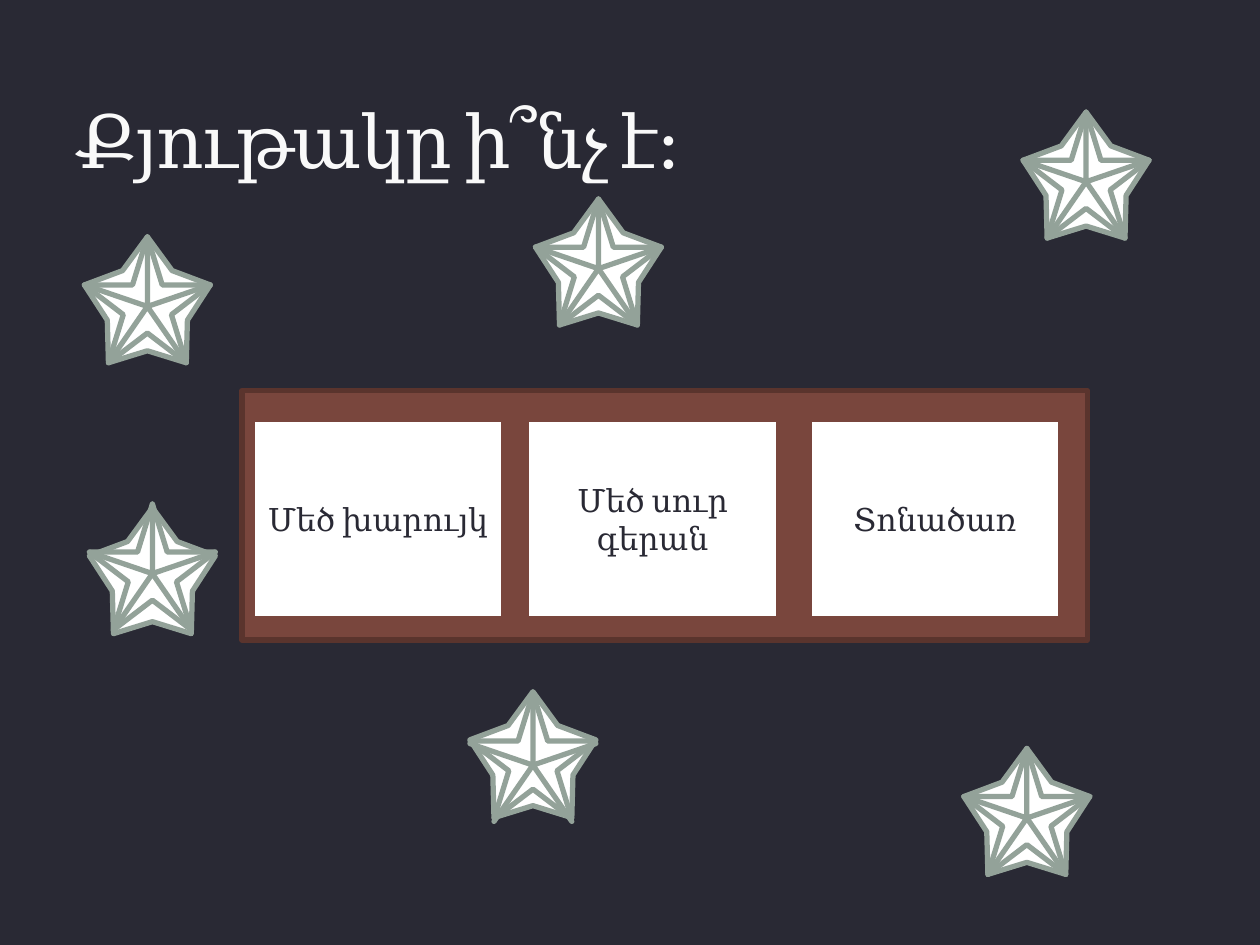
"""Build a slide with a question, three answer cards and layered stars."""
from pptx import Presentation
from pptx.dml.color import RGBColor
from pptx.enum.shapes import MSO_SHAPE
from pptx.enum.text import MSO_ANCHOR, PP_ALIGN
from pptx.util import Inches, Pt

BACKGROUND = RGBColor(0x29, 0x29, 0x34)
TITLE_COLOR = RGBColor(0xF9, 0xF9, 0xF9)
WHITE = RGBColor(0xFF, 0xFF, 0xFF)
SAGE = RGBColor(0x93, 0xA2, 0x99)
BROWN = RGBColor(0x79, 0x46, 0x3D)
DARK_BROWN = RGBColor(0x5A, 0x34, 0x2D)
FONT = "Cambria"

TITLE = "Քյութակը ի՞նչ է։"
CARDS = [(2, "Մեծ խարույկ"), (4.18, "Մեծ սուր գերան"), (6.42, "Տոնածառ")]
STAR_DEPTHS = (0.318, 0.191, 0)
STARS = [
    (8.12, (0.89, 0.89, 0.89)),
    (0.71, (4.03, 4, 4)),
    (4.25, (1.58, 1.58, 1.58)),
    (3.73, (5.49, 5.5, 5.52)),
    (0.67, (1.88, 1.88, 1.88)),
    (7.65, (5.94, 5.94, 5.94)),
]


def add_filled_shape(slide, kind, box, fill, line):
    shape = slide.shapes.add_shape(kind, *(Inches(length) for length in box))
    shape.shadow.inherit = False
    shape.fill.solid()
    shape.fill.fore_color.rgb = fill
    shape.line.color.rgb = line
    shape.line.width = Pt(3)
    return shape


def write_text(shape, text, size, color, anchor, alignment):
    frame = shape.text_frame
    frame.word_wrap = True
    frame.vertical_anchor = anchor
    frame.text = text
    paragraph = frame.paragraphs[0]
    paragraph.alignment = alignment
    run = paragraph.runs[0]
    run.font.name = FONT
    run.font.size = Pt(size)
    run.font.color.rgb = color
    return run


def add_star(slide, left, tops):
    for top, depth in zip(tops, STAR_DEPTHS):
        star = add_filled_shape(
            slide, MSO_SHAPE.STAR_5_POINT, (left, top, 1, 1), WHITE, SAGE
        )
        star.adjustments[0] = depth


def main():
    presentation = Presentation()
    presentation.slide_width = Inches(10)
    presentation.slide_height = Inches(7.5)
    slide = presentation.slides.add_slide(presentation.slide_layouts[6])
    slide.background.fill.solid()
    slide.background.fill.fore_color.rgb = BACKGROUND

    title = slide.shapes.add_textbox(
        Inches(0.5), Inches(0.17), Inches(9), Inches(1.33)
    )
    run = write_text(
        title, TITLE, 42, TITLE_COLOR, MSO_ANCHOR.BOTTOM, PP_ALIGN.LEFT
    )
    run.font._element.set("spc", "-100")

    for left, tops in STARS:
        add_star(slide, left, tops)

    add_filled_shape(
        slide, MSO_SHAPE.RECTANGLE, (1.92, 3.1, 6.71, 1.98), BROWN, DARK_BROWN
    )
    for left, text in CARDS:
        card = add_filled_shape(
            slide, MSO_SHAPE.RECTANGLE, (left, 3.33, 2, 1.58), WHITE, BROWN
        )
        write_text(card, text, 18, BACKGROUND, MSO_ANCHOR.MIDDLE, PP_ALIGN.CENTER)

    presentation.save("out.pptx")


if __name__ == "__main__":
    main()
